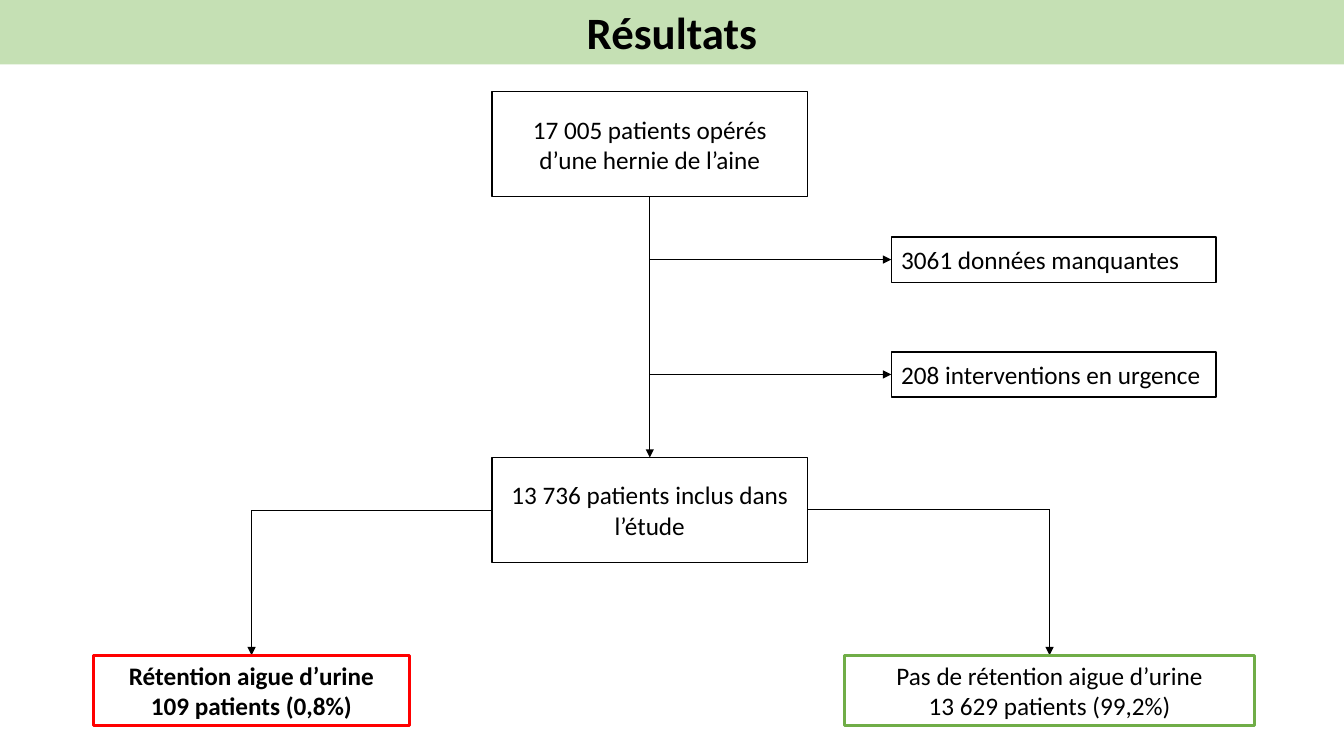
import dataclasses

import pptx
import pptx.util
import pptx.dml.color
import pptx.enum.shapes
import pptx.enum.text
import pptx.oxml
import pptx.oxml.ns

Inches = pptx.util.Inches
Pt = pptx.util.Pt
ALIGN = pptx.enum.text.PP_ALIGN
ANCHOR = pptx.enum.text.MSO_ANCHOR


@dataclasses.dataclass(frozen=True)
class Theme:
    """Colours, font, type sizes and line widths."""
    font: str = "Calibri"
    ink: str = "000000"
    banner: str = "C5E0B4"
    red: str = "FF0000"
    green: str = "70AD47"
    title: float = 32
    body: float = 18
    thin: float = 0.5
    border: float = 1
    thick: float = 2.25


T = Theme()


def rgb(value):
    """Turn a hex string into a colour."""
    return pptx.dml.color.RGBColor.from_string(value)


def write(sp, text, size=T.body, bold=False, align=ALIGN.CENTER, anchor=ANCHOR.MIDDLE):
    """Fill a shape with text, one paragraph per line."""
    tf = sp.text_frame
    tf.word_wrap = True
    tf.vertical_anchor = anchor
    for i, line in enumerate(text.split("\n")):
        p = tf.add_paragraph() if i else tf.paragraphs[0]
        p.alignment = align
        r = p.add_run()
        r.text = line
        r.font.name = T.font
        r.font.size = Pt(size)
        r.font.bold = bold
        r.font.color.rgb = rgb(T.ink)


def box(s, at, text, fill=None, line=T.ink, width=T.border, **fmt):
    """Draw a rectangle with text, filled or outlined as asked."""
    sp = s.shapes.add_shape(pptx.enum.shapes.MSO_SHAPE.RECTANGLE, *map(Inches, at))
    sp.shadow.inherit = False
    if fill:
        sp.fill.solid()
        sp.fill.fore_color.rgb = rgb(fill)
    else:
        sp.fill.background()
    if line:
        sp.line.color.rgb = rgb(line)
        sp.line.width = Pt(width)
    else:
        sp.line.fill.background()
    write(sp, text, **fmt)


def connect(s, x1, y1, x2, y2, arrow=True):
    """Draw a thin straight connector, with an arrowhead at its end if asked."""
    c = s.shapes.add_connector(pptx.enum.shapes.MSO_CONNECTOR.STRAIGHT,
                               *map(Inches, (x1, y1, x2, y2)))
    c.line.color.rgb = rgb(T.ink)
    c.line.width = Pt(T.thin)
    pr = c._element.spPr
    if arrow:
        tail = pptx.oxml.parse_xml(
            '<a:tailEnd %s type="triangle"/>' % pptx.oxml.ns.nsdecls("a"))
        c.line._get_or_add_ln().append(tail)
    pr.append(pptx.oxml.parse_xml("<a:effectLst %s/>" % pptx.oxml.ns.nsdecls("a")))


def title_banner(s, at):
    """Draw the title band."""
    box(s, at, "Résultats", fill=T.banner, line=None,
        size=T.title, bold=True, anchor=ANCHOR.TOP)


def inclusion(s, x, y, w, h):
    """Draw the main path from operated to included patients, with exclusions."""
    box_h = 1.04
    mid = x + w / 2
    included_y = y + h - box_h
    box(s, (x, y, w, box_h), "17 005 patients opérés d’une hernie de l’aine")
    box(s, (x, included_y, w, box_h), "13 736 patients inclus dans l’étude")
    connect(s, mid, y + box_h, mid, included_y)
    side_x, side_w, side_h = x + w + 0.83, 3.22, 0.45
    reasons = ("3061 données manquantes", "208 interventions en urgence")
    for i, reason in enumerate(reasons):
        side_y = y + 1.44 + i * 1.14
        box(s, (side_x, side_y, side_w, side_h), reason, align=ALIGN.LEFT)
        connect(s, mid, side_y + side_h / 2, side_x, side_y + side_h / 2)


def outcome(s, at, text, start, color, bold=False):
    """Draw an outcome box and the elbow that leads to it from a start point."""
    x, y, w, h = at
    mid = x + w / 2
    connect(s, *start, mid, start[1], arrow=False)
    connect(s, mid, start[1], mid, y)
    box(s, at, text, line=color, width=T.thick, bold=bold)


def main():
    """Build the slide and save it."""
    prs = pptx.Presentation()
    prs.slide_width, prs.slide_height = Inches(13.33), Inches(7.5)
    s = prs.slides.add_slide(prs.slide_layouts[6])
    inclusion(s, 4.88, 0.91, 3.13, 4.67)
    outcome(s, (0.93, 6.5, 3.13, 0.7), "Rétention aigue d’urine\n109 patients (0,8%)",
            (4.88, 5.06), T.red, bold=True)
    outcome(s, (8.38, 6.5, 4.06, 0.7),
            "Pas de rétention aigue d’urine\n13 629 patients (99,2%)",
            (8.01, 5.05), T.green)
    title_banner(s, (0, 0, 13.33, 0.64))
    prs.save("out.pptx")


if __name__ == "__main__":
    main()
